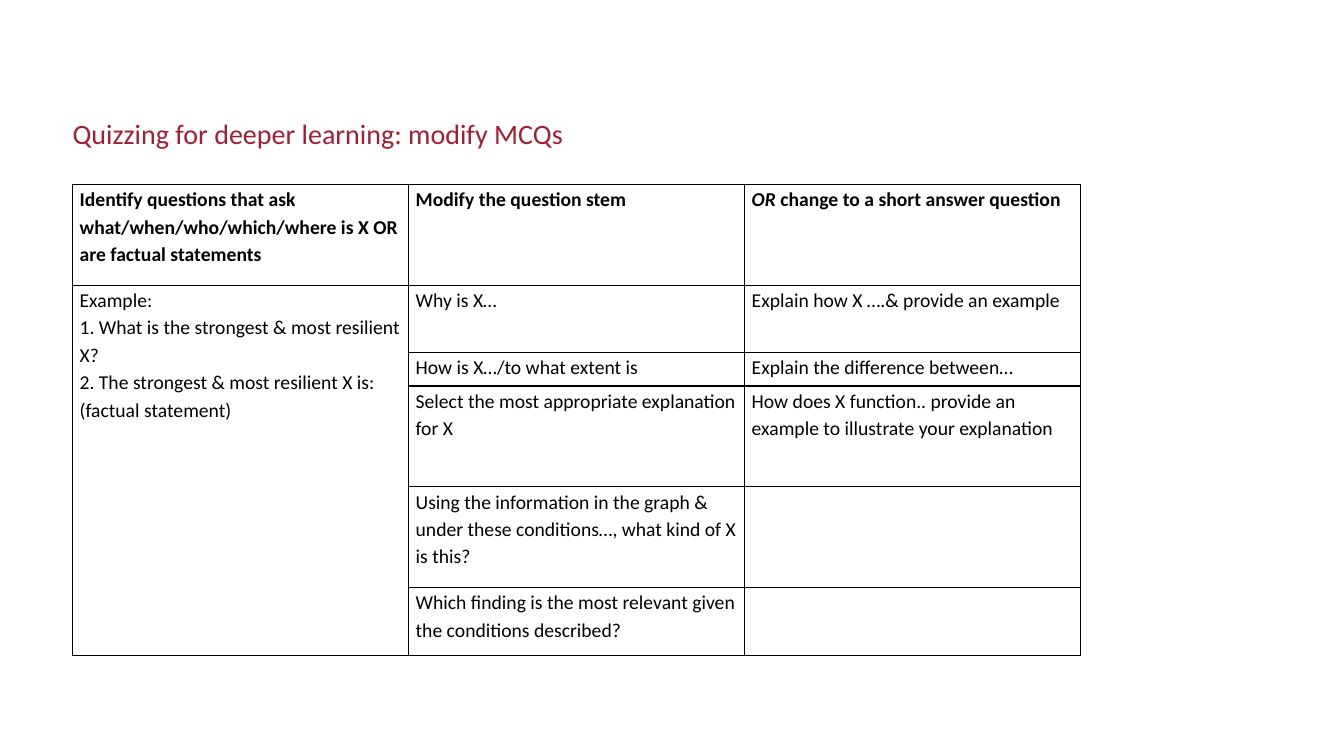
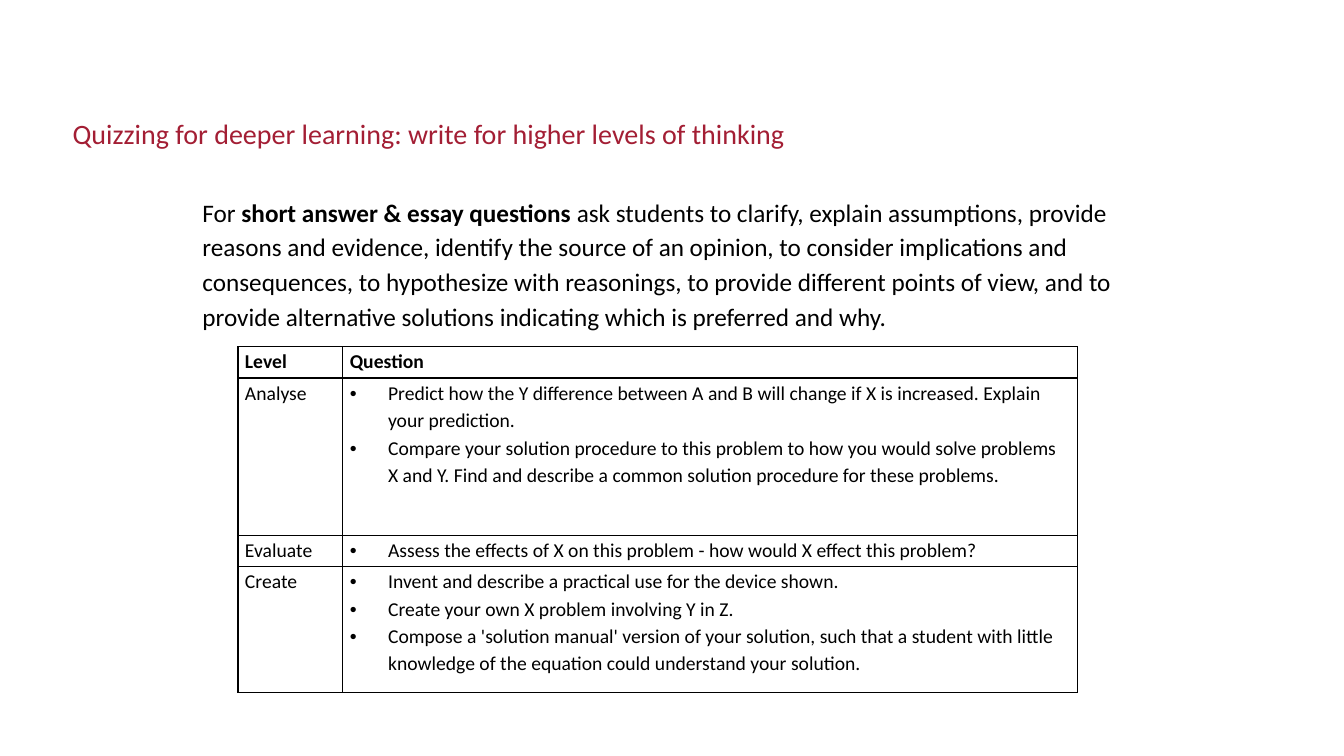
from dataclasses import dataclass

from lxml import etree
from pptx import Presentation
from pptx.dml.color import RGBColor
from pptx.enum import text as t
from pptx.oxml import ns
from pptx.util import Inches, Pt

RED = RGBColor(0xA3, 0x1E, 0x34)
BLACK = RGBColor(0, 0, 0)
FONT = "Calibri"
LEADING = 1.15
PAD = Inches(0.07)
INDENT = Inches(0.38)


@dataclass
class Run:
    text: str
    bold: bool = False
    italic: bool = False


@dataclass
class Para:
    runs: list[Run]
    bullet: bool = False


@dataclass
class Grid:
    left: float
    top: float
    cols: list[float]
    rows: list[float]
    cells: list[list[list[Para]]]


def plain(*lines: str) -> list[Para]:
    return [Para([Run(line)]) for line in lines]


def head(line: str) -> list[Para]:
    return [Para([Run(line, bold=True)])]


def points(*lines: str) -> list[Para]:
    return [Para([Run(line)], bullet=True) for line in lines]


def set_font(par, size: int, color: RGBColor) -> None:
    par.font.name = FONT
    par.font.size = Pt(size)
    par.font.color.rgb = color


def add_bullet(par) -> None:
    props = par._p.get_or_add_pPr()
    props.set("marL", str(INDENT))
    props.set("indent", str(-INDENT))
    etree.SubElement(props, ns.qn("a:buFont"), typeface="Arial")
    etree.SubElement(props, ns.qn("a:buChar"), char="•")


def write(frame, paras: list[Para], size: int) -> None:
    for i, item in enumerate(paras):
        par = frame.add_paragraph() if i else frame.paragraphs[0]
        par.line_spacing = LEADING
        if item.bullet:
            add_bullet(par)
        set_font(par, size, BLACK)
        for part in item.runs:
            run = par.add_run()
            run.text = part.text
            if len(item.runs) > 1:
                run.font.bold = part.bold
                run.font.italic = part.italic
            else:
                par.font.bold = part.bold


def add_border(cell) -> None:
    props = cell._tc.get_or_add_tcPr()
    for i, side in enumerate("LRTB"):
        line = etree.Element(ns.qn(f"a:ln{side}"), w=str(Pt(1)))
        fill = etree.SubElement(line, ns.qn("a:solidFill"))
        etree.SubElement(fill, ns.qn("a:srgbClr"), val=str(BLACK))
        props.insert(i, line)


def add_grid(slide, grid: Grid):
    frame = slide.shapes.add_table(
        len(grid.rows), len(grid.cols), Inches(grid.left), Inches(grid.top),
        Inches(sum(grid.cols)), Inches(sum(grid.rows)))
    table = frame.table
    table.first_row = table.horz_banding = False
    for col, width in zip(table.columns, grid.cols):
        col.width = Inches(width)
    for row, height in zip(table.rows, grid.rows):
        row.height = Inches(height)
    for r, line in enumerate(grid.cells):
        for c, paras in enumerate(line):
            cell = table.cell(r, c)
            cell.margin_left = cell.margin_right = PAD
            cell.margin_top = cell.margin_bottom = 0
            cell.fill.background()
            add_border(cell)
            write(cell.text_frame, paras, 14)
    return table


def add_slide(deck, title: str, width: float):
    slide = deck.slides.add_slide(deck.slide_layouts[5])
    shape = slide.shapes.title
    shape.left, shape.top = Inches(0.72), Inches(1.11)
    shape.width, shape.height = Inches(width), Inches(0.75)
    frame = shape.text_frame
    frame.text = title
    frame.margin_left = frame.margin_right = 0
    frame.margin_top = frame.margin_bottom = 0
    frame.word_wrap = True
    frame.auto_size = t.MSO_AUTO_SIZE.NONE
    frame.vertical_anchor = t.MSO_ANCHOR.TOP
    par = frame.paragraphs[0]
    par.alignment = t.PP_ALIGN.LEFT
    par.line_spacing = Pt(27)
    set_font(par, 20, RED)
    return slide


# Rewording of quiz questions; the example spans all rows below the header
STEMS = Grid(0.72, 1.83, [10 / 3] * 3, [1, 0.67, 0.33, 1, 1, 0.67], [
    [head("Identify questions that ask what/when/who/which/where is X OR "
          "are factual statements"),
     head("Modify the question stem"),
     [Para([Run("OR", True, True),
            Run(" change to a short answer question", True)])]],
    [plain("Example:", "1. What is the strongest & most resilient X?",
           "2. The strongest & most resilient X is: (factual statement)"),
     plain("Why is X…"), plain("Explain how X ….& provide an example")],
    [[], plain("How is X…/to what extent is"),
     plain("Explain the difference between…")],
    [[], plain("Select the most appropriate explanation for X"),
     plain("How does X function.. provide an example to illustrate your "
           "explanation")],
    [[], plain("Using the information in the graph & under these "
               "conditions…, what kind of X is this?"), []],
    [[], plain("Which finding is the most relevant given the conditions "
               "described?"), []],
])

# Sample questions by level of thinking
LEVELS = Grid(2.36, 3.44, [1.04, 7.29], [0.31, 1.56, 0.31, 1.25], [
    [head("Level"), head("Question")],
    [plain("Analyse"), points(
        "Predict how the Y difference between A and B will change if X is "
        "increased. Explain your prediction.",
        "Compare your solution procedure to this problem to how you would "
        "solve problems X and Y. Find and describe a common solution "
        "procedure for these problems.")],
    [plain("Evaluate"), points(
        "Assess the effects of X on this problem - how would X effect this "
        "problem?")],
    [plain("Create"), points(
        "Invent and describe a practical use for the device shown.",
        "Create your own X problem involving Y in Z.",
        "Compose a 'solution manual' version of your solution, such that a "
        "student with little knowledge of the equation could understand "
        "your solution.")],
])

ADVICE = Para([
    Run("For "),
    Run("short answer & essay questions", bold=True),
    Run(" ask students to clarify, explain assumptions, provide reasons and "
        "evidence, identify the source of an opinion, to consider "
        "implications and consequences, to hypothesize with reasonings, to "
        "provide different points of view, and to provide alternative "
        "solutions indicating which is preferred and why."),
])


def main() -> None:
    deck = Presentation()
    deck.slide_width, deck.slide_height = Inches(13.33), Inches(7.5)

    # Slide 1: question stems
    slide = add_slide(deck, "Quizzing for deeper learning: modify MCQs", 6.07)
    table = add_grid(slide, STEMS)
    table.cell(1, 0).merge(table.cell(len(STEMS.rows) - 1, 0))

    # Slide 2: levels of thinking
    slide = add_slide(
        deck, "Quizzing for deeper learning: write for higher levels of "
        "thinking", 9.53)
    add_grid(slide, LEVELS)
    box = slide.shapes.add_textbox(
        Inches(1.91), Inches(1.86), Inches(9.26), Inches(1.49))
    frame = box.text_frame
    frame.word_wrap = True
    frame.auto_size = t.MSO_AUTO_SIZE.SHAPE_TO_FIT_TEXT
    write(frame, [ADVICE], 18)
    frame.paragraphs[0].space_after = Pt(10)

    deck.save("out.pptx")


if __name__ == "__main__":
    main()
